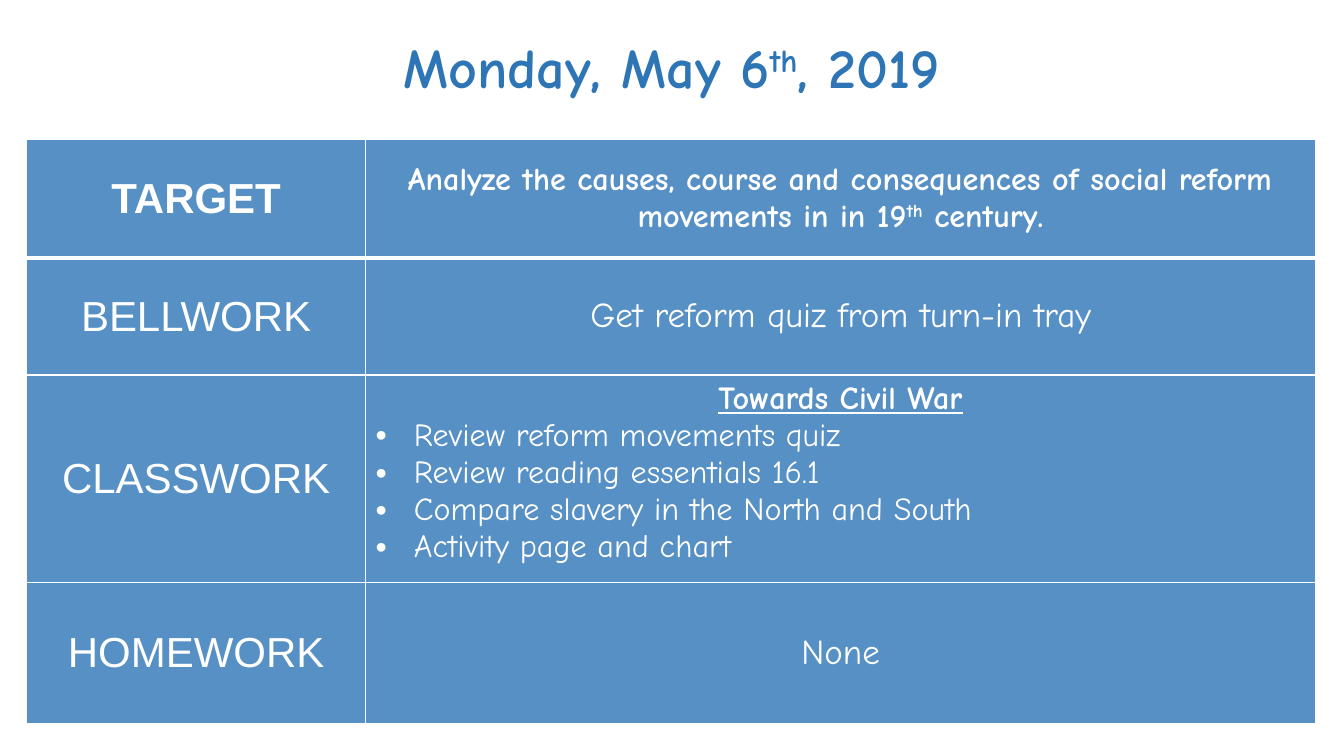
from lxml.etree import SubElement
from pptx import Presentation
from pptx.dml.color import RGBColor
from pptx.enum.shapes import MSO_SHAPE as SHAPE
from pptx.enum.text import MSO_ANCHOR as ANCHOR, PP_ALIGN as ALIGN
from pptx.oxml import parse_xml
from pptx.oxml.ns import nsdecls, qn
from pptx.util import Inches, Pt


def rgb(value):
    return RGBColor.from_string(value)


class Agenda:
    BLUE, WHITE = "2E75B6", "FFFFFF"
    LABEL, BODY = "Arial", "Comic Neue"
    COLUMNS, ROWS = 100, 75

    def __init__(self, prs):
        self.s = prs.slides.add_slide(prs.slide_layouts[6])
        self.col = prs.slide_width / self.COLUMNS
        self.row = prs.slide_height / self.ROWS

    def box(self, x, y, w, h):
        return [int(v) for v in (x * self.col, y * self.row, w * self.col, h * self.row)]

    def fill(self, target, color, opacity):
        target.fill.solid()
        target.fill.fore_color.rgb = rgb(color)

    def opacity(self, element, percent):
        color = element.find(qn("a:solidFill")).find(qn("a:srgbClr"))
        SubElement(color, qn("a:alpha"), val=str(percent * 1000))

    def fill_with(self, target, element, color, percent):
        target.fill.solid()
        target.fill.fore_color.rgb = rgb(color)
        self.opacity(element, percent)

    def run(self, p, text, font, size, color, bold=False, underline=False, raised=False):
        r = p.add_run()
        r.text = text
        f = r.font
        f.name, f.size, f.bold, f.underline = font, Pt(size), bold, underline
        f.color.rgb = rgb(color)
        if raised:
            r._r.get_or_add_rPr().set("baseline", "30000")

    def dated(self, p, parts, *style, **flags):
        for i, part in enumerate(parts):
            self.run(p, part, *style, raised=i % 2 == 1, **flags)

    def bullet(self, p):
        pPr = p._p.get_or_add_pPr()
        indent = Inches(0.38)
        pPr.set("marL", str(indent))
        pPr.set("indent", str(-indent))
        SubElement(pPr, qn("a:buFont"), typeface="Arial")
        SubElement(pPr, qn("a:buChar"), char="•")

    def title(self, box, parts):
        sp = self.s.shapes.add_shape(SHAPE.RECTANGLE, *self.box(*box))
        sp.shadow.inherit = False
        self.fill_with(sp, sp._element.spPr, self.WHITE, 65)
        sp.line.fill.background()
        tf = sp.text_frame
        tf.word_wrap = True
        tf.vertical_anchor = ANCHOR.MIDDLE
        p = tf.paragraphs[0]
        p.alignment = ALIGN.CENTER
        self.dated(p, parts, self.BODY, 40, self.BLUE, bold=True)

    def borders(self, tcPr, **widths):
        for i, side in enumerate("LRTB"):
            tcPr.insert(i, parse_xml(
                f'<a:ln{side} {nsdecls("a")} w="{Pt(widths.get(side, 1))}"><a:solidFill>'
                f'<a:srgbClr val="{self.WHITE}"/></a:solidFill></a:ln{side}>'))

    def table(self, x, y, widths, heights):
        box = self.box(x, y, sum(widths), sum(heights))
        table = self.s.shapes.add_table(len(heights), len(widths), *box).table
        for column, w in zip(table.columns, widths):
            column.width = int(w * self.col)
        for row, h in zip(table.rows, heights):
            row.height = int(h * self.row)
        for i, row in enumerate(table.rows):
            thick = {0: {"B": 3}, 1: {"T": 3}}.get(i, {})
            for cell in row.cells:
                tcPr = cell._tc.get_or_add_tcPr()
                self.fill_with(cell, tcPr, self.BLUE, 80)
                self.borders(tcPr, **thick)
                cell.vertical_anchor = ANCHOR.MIDDLE
        return table

    def entry(self, cell, parts, font, size, bold=False):
        p = cell.text_frame.paragraphs[0]
        p.alignment = ALIGN.CENTER
        self.dated(p, parts, font, size, self.WHITE, bold=bold)

    def task_list(self, cell, heading, tasks):
        cell.vertical_anchor = ANCHOR.TOP
        tf = cell.text_frame
        p = tf.paragraphs[0]
        p.alignment = ALIGN.CENTER
        self.run(p, heading, self.BODY, 23, self.WHITE, bold=True, underline=True)
        for task in tasks:
            p = tf.add_paragraph()
            p.alignment = ALIGN.LEFT
            self.bullet(p)
            self.run(p, task, self.BODY, 23, self.WHITE)


def main():
    prs = Presentation()
    prs.slide_width, prs.slide_height = Inches(13.33), Inches(7.5)
    agenda = Agenda(prs)

    table = agenda.table(2, 13.8, [25.2, 70.7], [11.8, 11.6, 20.6, 14])
    for i, label in enumerate(["TARGET", "BELLWORK", "CLASSWORK", "HOMEWORK"]):
        agenda.entry(table.cell(i, 0), [label], agenda.LABEL, 30, bold=i == 0)

    target = ["Analyze the causes, course and consequences of social reform movements in in 19",
              "th", " century."]
    agenda.entry(table.cell(0, 1), target, agenda.BODY, 23, bold=True)
    agenda.entry(table.cell(1, 1), ["Get reform quiz from turn-in tray"], agenda.BODY, 25)
    agenda.task_list(table.cell(2, 1), "Towards Civil War", [
        "Review reform movements quiz",
        "Review reading essentials 16.1",
        "Compare slavery in the North and South",
        "Activity page and chart",
    ])
    agenda.entry(table.cell(3, 1), ["None"], agenda.BODY, 25)

    agenda.title((2, 1.6, 95.9, 10), ["Monday, May 6", "th", ", 2019"])
    prs.save("out.pptx")


if __name__ == "__main__":
    main()
